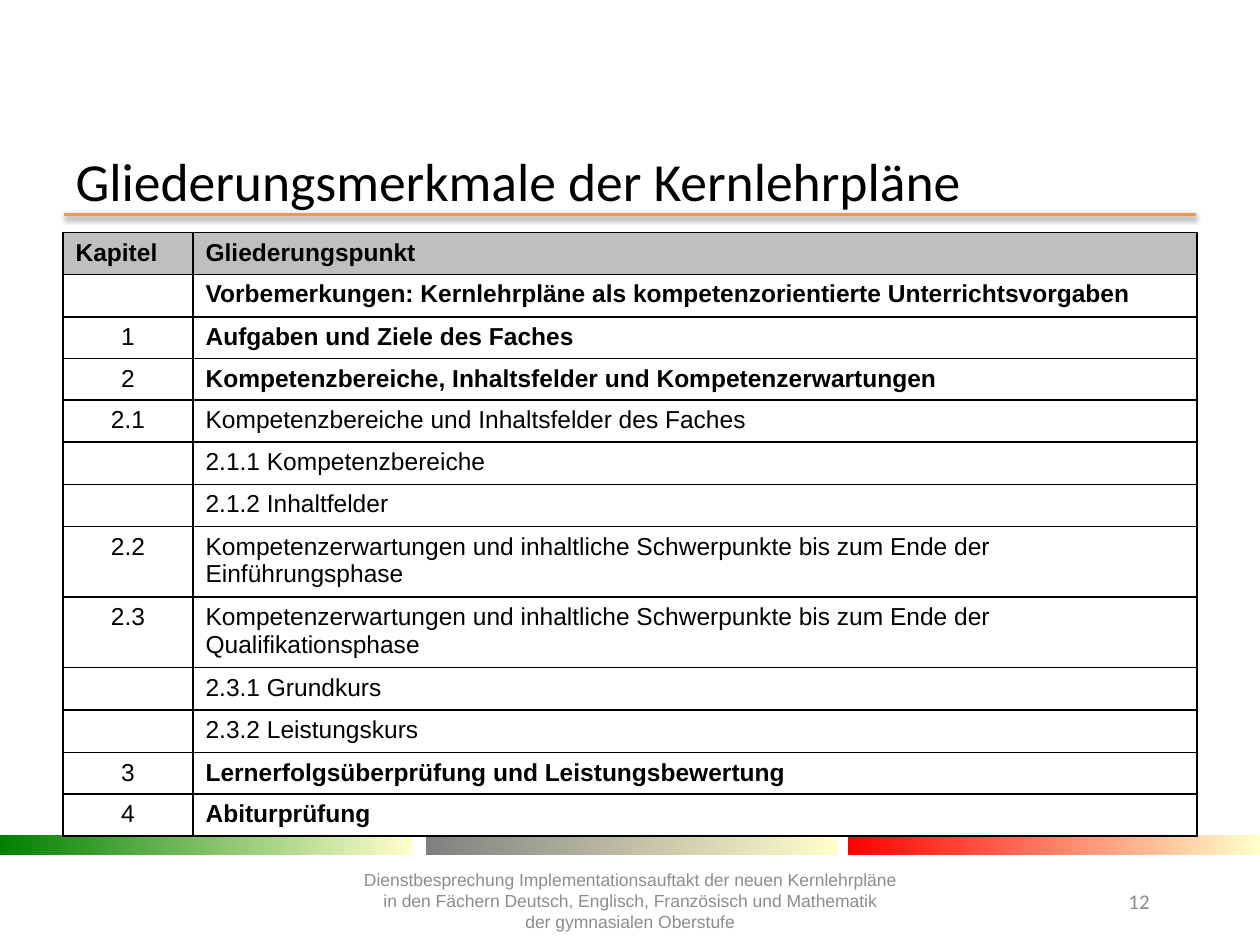
from lxml import etree
from pptx import Presentation
from pptx.dml.color import RGBColor
from pptx.enum.shapes import MSO_CONNECTOR, MSO_SHAPE
from pptx.enum.text import MSO_ANCHOR, MSO_AUTO_SIZE, PP_ALIGN
from pptx.oxml import parse_xml
from pptx.oxml.ns import nsdecls, qn
from pptx.util import Cm, Pt

LINE = MSO_CONNECTOR.STRAIGHT
RECT = MSO_SHAPE.RECTANGLE
TOP, MIDDLE = MSO_ANCHOR.TOP, MSO_ANCHOR.MIDDLE
LEFT, CENTER = PP_ALIGN.LEFT, PP_ALIGN.CENTER
NO_FIT = MSO_AUTO_SIZE.NONE

BLACK = RGBColor(0x00, 0x00, 0x00)
ORANGE = RGBColor(0xF7, 0x96, 0x46)
GREEN = RGBColor(0x00, 0x80, 0x00)
GRAY = RGBColor(0x80, 0x80, 0x80)
RED = RGBColor(0xFF, 0x00, 0x00)
CREAM = RGBColor(0xFF, 0xFF, 0xCC)
HEADER_GRAY = RGBColor(0xBF, 0xBF, 0xBF)
FOOTER_GRAY = RGBColor(0x8C, 0x8C, 0x8C)

TITLE_FONT = {"name": "Calibri", "size": Pt(30.6), "bold": False}
CELL_FONT = {"name": "Arial", "size": Pt(14)}
FOOTER_FONT = {"name": "Arial", "size": Pt(10)}
NUMBER_FONT = {"name": "Calibri", "size": Pt(12)}

ROW_HEIGHT, TALL_ROW_HEIGHT = Cm(0.84), Cm(1.42)
TALL_ROWS = ("2.2", "2.3")
BOLD_CHAPTERS = ("Kapitel", "1", "2", "3", "4")
PREFACE = "Vorbemerkungen: Kernlehrpläne als kompetenzorientierte Unterrichtsvorgaben"
ROWS = [
    ("Kapitel", "Gliederungspunkt"),
    ("", PREFACE),
    ("1", "Aufgaben und Ziele des Faches"),
    ("2", "Kompetenzbereiche, Inhaltsfelder und Kompetenzerwartungen"),
    ("2.1", "Kompetenzbereiche und Inhaltsfelder des Faches"),
    ("", "2.1.1 Kompetenzbereiche"),
    ("", "2.1.2 Inhaltfelder"),
    ("2.2", "Kompetenzerwartungen und inhaltliche Schwerpunkte bis zum Ende der Einführungsphase"),
    ("2.3", "Kompetenzerwartungen und inhaltliche Schwerpunkte bis zum Ende der Qualifikationsphase"),
    ("", "2.3.1 Grundkurs"),
    ("", "2.3.2 Leistungskurs"),
    ("3", "Lernerfolgsüberprüfung und Leistungsbewertung"),
    ("4", "Abiturprüfung"),
]
FOOTER = (
    "Dienstbesprechung Implementationsauftakt der neuen Kernlehrpläne\v"
    "in den Fächern Deutsch, Englisch, Französisch und Mathematik\v"
    "der gymnasialen Oberstufe"
)


def format_font(font, values, color):
    """Apply a dict of font values and a colour."""
    for name, value in values.items():
        setattr(font, name, value)
    font.color.rgb = color


def write_text(tf, text, values, color, align, anchor):
    """Fill a text frame with one formatted paragraph."""
    tf.word_wrap = True
    tf.auto_size = NO_FIT
    tf.vertical_anchor = anchor
    p = tf.paragraphs[0]
    p.text = text
    p.alignment = align
    for r in p.runs:
        format_font(r.font, values, color)


def set_title(s, text):
    """Place and format the title placeholder."""
    sp = s.shapes.title
    sp.left, sp.top, sp.width, sp.height = Cm(1.27), Cm(3.12), Cm(22.86), Cm(1)
    write_text(sp.text_frame, text, TITLE_FONT, BLACK, LEFT, MIDDLE)


def add_rule(s, left, right, y):
    """Draw the shadowed rule under the title."""
    sp = s.shapes.add_connector(LINE, left, y, right, y)
    sp.line.color.rgb = ORANGE
    sp.line.width = Pt(2)
    sp.element.spPr.append(parse_xml(
        f'<a:effectLst {nsdecls("a")}>'
        f'<a:outerShdw blurRad="{Pt(3.1)}" dist="{Pt(1.6)}" dir="5400000" rotWithShape="0">'
        '<a:srgbClr val="000000"><a:alpha val="38000"/></a:srgbClr>'
        '</a:outerShdw></a:effectLst>'))


def add_gradient_bar(s, left, color):
    """Draw a footer bar that fades to cream."""
    sp = s.shapes.add_shape(RECT, left, Cm(16.84), Cm(8.3), Cm(0.4))
    sp.shadow.inherit = False
    sp.line.fill.background()
    sp.fill.gradient()
    sp.fill.gradient_angle = 0
    for stop, rgb in zip(sp.fill.gradient_stops, (color, CREAM)):
        stop.color.rgb = rgb


def add_text(s, box, text, values, align, anchor):
    """Add a gray footer text box."""
    sp = s.shapes.add_textbox(*box)
    write_text(sp.text_frame, text, values, FOOTER_GRAY, align, anchor)


def add_borders(cell):
    """Give a cell thin black borders on all sides."""
    tcPr = cell._tc.get_or_add_tcPr()
    for i, side in enumerate(("lnL", "lnR", "lnT", "lnB")):
        tcPr.insert(i, parse_xml(
            f'<a:{side} {nsdecls("a")} w="{Pt(1)}">'
            f'<a:solidFill><a:srgbClr val="{BLACK}"/></a:solidFill></a:{side}>'))


def fill_cell(cell, text, bold, align, header):
    """Write and format one table cell."""
    if header:
        cell.fill.solid()
        cell.fill.fore_color.rgb = HEADER_GRAY
    else:
        cell.fill.background()
    add_borders(cell)
    p = cell.text_frame.paragraphs[0]
    p.alignment = align
    if text:
        r = p.add_run()
        r.text = text
        format_font(r.font, {**CELL_FONT, "bold": bold}, BLACK)
    else:
        size = str(CELL_FONT["size"].centipoints)
        etree.SubElement(p._p, qn("a:endParaRPr"), sz=size)


def add_outline_table(s):
    """Add the table of chapters."""
    height = sum(TALL_ROW_HEIGHT if c in TALL_ROWS else ROW_HEIGHT for c, _ in ROWS)
    table = s.shapes.add_table(len(ROWS), 2, Cm(1.27), Cm(4.69), Cm(22.86), height).table
    table.horz_banding = False
    table.columns[0].width, table.columns[1].width = Cm(2.62), Cm(20.24)
    for i, (chapter, point) in enumerate(ROWS):
        header = i == 0
        table.rows[i].height = TALL_ROW_HEIGHT if chapter in TALL_ROWS else ROW_HEIGHT
        bold = chapter in BOLD_CHAPTERS or point == PREFACE
        fill_cell(table.cell(i, 0), chapter, header, LEFT if header else CENTER, header)
        fill_cell(table.cell(i, 1), point, bold, LEFT, header)


def main():
    """Build the slide and save it."""
    prs = Presentation()
    prs.slide_width, prs.slide_height = Cm(25.4), Cm(19.05)
    s = prs.slides.add_slide(prs.slide_layouts[5])
    add_rule(s, Cm(1.3), Cm(24.1), Cm(4.32))
    for left, color in ((0, GREEN), (8.59, GRAY), (17.1, RED)):
        add_gradient_bar(s, Cm(left), color)
    set_title(s, "Gliederungsmerkmale der Kernlehrpläne")
    add_outline_table(s)
    add_text(s, (Cm(22.5), Cm(17.78), Cm(1.63), Cm(1.02)), "12", NUMBER_FONT, LEFT, TOP)
    add_text(s, (Cm(6.5), Cm(17.45), Cm(12.4), Cm(1.42)), FOOTER, FOOTER_FONT, CENTER, MIDDLE)
    prs.save("out.pptx")


if __name__ == "__main__":
    main()
